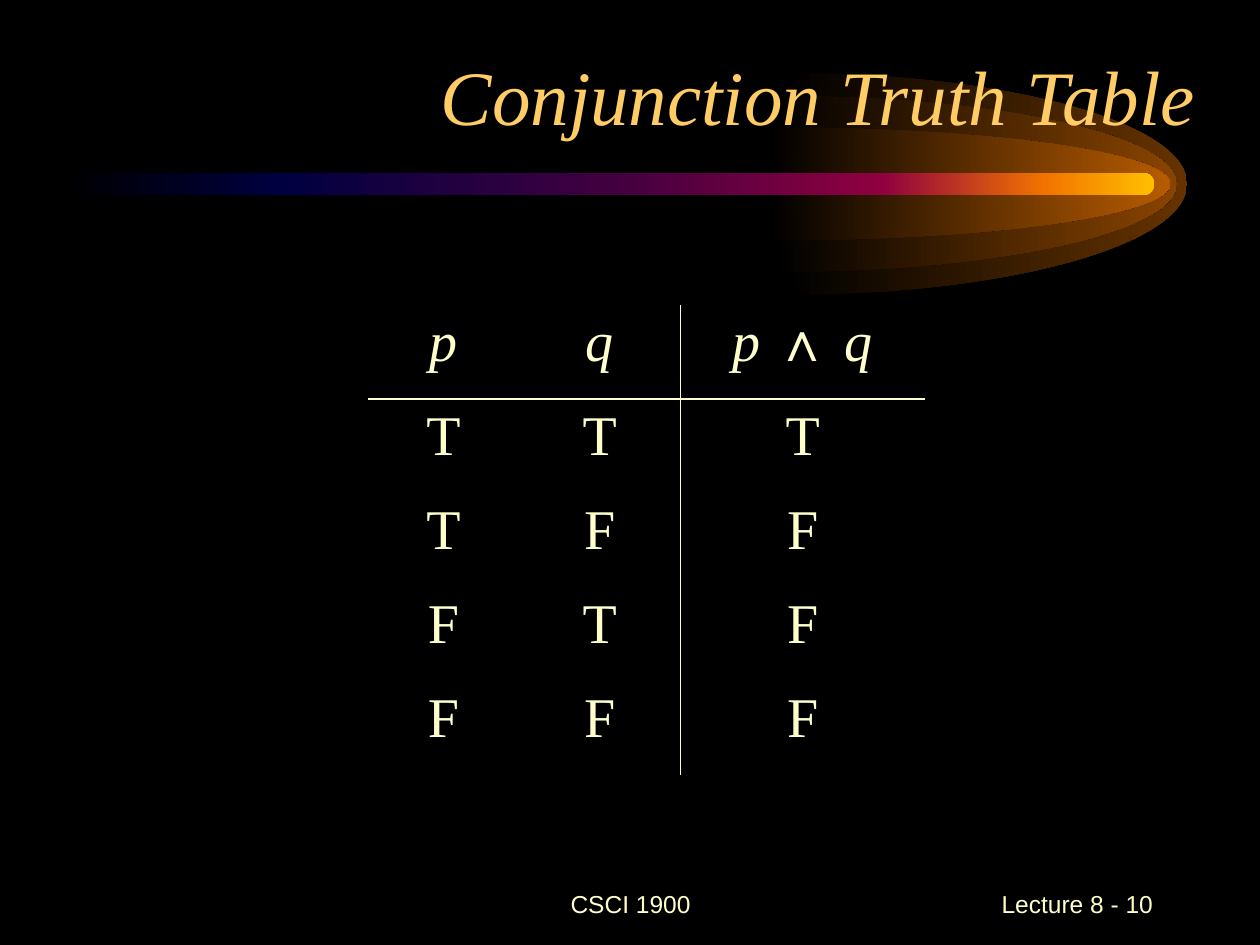
from dataclasses import dataclass

from lxml import etree
from pptx import Presentation
from pptx.dml.color import RGBColor
from pptx.enum.shapes import MSO_SHAPE
from pptx.enum.text import MSO_ANCHOR, PP_ALIGN
from pptx.oxml.ns import qn
from pptx.util import Inches, Pt

CENTER, RIGHT = PP_ALIGN.CENTER, PP_ALIGN.RIGHT
MIDDLE, BOTTOM = MSO_ANCHOR.MIDDLE, MSO_ANCHOR.BOTTOM
ROUND = MSO_SHAPE.ROUNDED_RECTANGLE

BLACK = RGBColor(0x00, 0x00, 0x00)
CREAM = RGBColor(0xFF, 0xFF, 0xCC)
GOLD = RGBColor(0xFF, 0xCC, 0x66)
TAIL = [
    (0, BLACK),
    (20, RGBColor(0x00, 0x00, 0x40)),
    (50, RGBColor(0x40, 0x00, 0x40)),
    (75, RGBColor(0x8F, 0x00, 0x40)),
    (90, RGBColor(0xF2, 0x73, 0x00)),
    (100, RGBColor(0xFF, 0xBF, 0x00)),
]
SERIF, SANS = "Times New Roman", "Arial"

MID_Y = 1.46
GLOW_W = 3.18
BEND = 0.55


@dataclass
class Glow:
    left: float
    half: float
    color: RGBColor


@dataclass
class Label:
    text: str
    box: tuple
    size: int
    font: str
    color: RGBColor
    align: PP_ALIGN
    anchor: MSO_ANCHOR
    italic: bool = False


GLOWS = [
    Glow(6.24, 0.88, RGBColor(0x66, 0x33, 0x00)),
    Glow(6.16, 0.7, RGBColor(0x89, 0x44, 0x00)),
    Glow(6.11, 0.45, RGBColor(0xB7, 0x5B, 0x00)),
]
LABELS = [
    Label("CSCI 1900", (3.42, 6.92, 3.17, 0.5), 14, SANS, CREAM, CENTER, MIDDLE),
    Label("Lecture 8 - 10", (7.17, 6.92, 2.08, 0.5), 14, SANS, CREAM, RIGHT, MIDDLE),
    Label("Conjunction Truth Table", (0.42, 0.25, 9.17, 0.92), 44, SERIF, GOLD,
          RIGHT, BOTTOM, True),
]
HEAD = ["p", "q", "p ∧ q"]
ROWS = [HEAD, list("TTT"), list("TFF"), list("FTF"), list("FFF")]
COLS = [1.2, 1.28, 1.94]
TABLE_H = 3.73


def paint(shape, stops: list) -> None:
    """Fill a shape from left to right with (percent, colour) stops."""
    shape.shadow.inherit = False
    shape.line.fill.background()
    shape.fill.gradient()
    shape.fill.gradient_angle = 0
    grad = shape._element.spPr.find(qn("a:gradFill")).find(qn("a:gsLst"))
    for old in list(grad):
        grad.remove(old)
    for pos, color in stops:
        stop = etree.SubElement(grad, qn("a:gs"), pos=str(pos * 1000))
        etree.SubElement(stop, qn("a:srgbClr"), val=str(color))


def add_glow(slide, glow: Glow) -> None:
    """Draw the right half of an ellipse, its two quarters as curves."""
    wide, half = Inches(GLOW_W), Inches(glow.half)
    pen = slide.shapes.build_freeform(0, 0)
    pen.add_line_segments([(wide, half), (0, 2 * half)], close=True)
    shape = pen.convert_to_shape(Inches(glow.left), Inches(MID_Y - glow.half))
    curves = [
        [(BEND * wide, 0), (wide, (1 - BEND) * half), (wide, half)],
        [(wide, (1 + BEND) * half), (BEND * wide, 2 * half), (0, 2 * half)],
    ]
    lines = list(shape._element.spPr.iter(qn("a:lnTo")))
    for line, points in zip(lines, curves):
        curve = etree.Element(qn("a:cubicBezTo"))
        for x, y in points:
            etree.SubElement(curve, qn("a:pt"), x=str(int(x)), y=str(int(y)))
        line.getparent().replace(line, curve)
    paint(shape, [(0, BLACK), (100, glow.color)])


def add_label(slide, label: Label) -> None:
    frame = slide.shapes.add_textbox(*map(Inches, label.box)).text_frame
    frame.word_wrap = True
    frame.vertical_anchor = label.anchor
    par = frame.paragraphs[0]
    par.text = label.text
    par.alignment = label.align
    par.font.size = Pt(label.size)
    par.font.name = label.font
    par.font.italic = label.italic
    par.font.color.rgb = label.color


def set_edges(cell, sides: str) -> None:
    """Rule the sides named in a string of L, R, T and B; clear the others."""
    props = cell._tc.get_or_add_tcPr()
    for i, side in enumerate("LRTB"):
        line = etree.Element(qn(f"a:ln{side}"), w=str(Pt(1)))
        if side in sides:
            fill = etree.SubElement(line, qn("a:solidFill"))
            etree.SubElement(fill, qn("a:srgbClr"), val=str(CREAM))
        else:
            etree.SubElement(line, qn("a:noFill"))
        props.insert(i, line)


def fill_cell(cell, text: str, head: bool) -> None:
    cell.fill.background()
    par = cell.text_frame.paragraphs[0]
    par.alignment = CENTER
    par.font.size = Pt(32)
    par.font.name = SERIF
    par.font.color.rgb = CREAM
    parts = ["p ", "∧ ", "q"] if "∧" in text else [text]
    for part in parts:
        run = par.add_run()
        run.text = part
        run.font.italic = head and "∧" not in part


def add_truth(slide) -> None:
    box = map(Inches, (2.92, 2.42, sum(COLS), TABLE_H))
    table = slide.shapes.add_table(len(ROWS), len(COLS), *box).table
    table.first_row = table.horz_banding = False
    for col, width in zip(table.columns, COLS):
        col.width = Inches(width)
    for r, row in enumerate(ROWS):
        for c, text in enumerate(row):
            cell = table.cell(r, c)
            fill_cell(cell, text, r == 0)
            set_edges(cell, ["", "R", "L"][c] + {0: "B", 1: "T"}.get(r, ""))


def main() -> None:
    deck = Presentation()
    deck.slide_width, deck.slide_height = Inches(10), Inches(7.5)
    slide = deck.slides.add_slide(deck.slide_layouts[6])
    back = slide.background.fill
    back.solid()
    back.fore_color.rgb = BLACK
    for glow in GLOWS:
        add_glow(slide, glow)
    bar = slide.shapes.add_shape(ROUND, *map(Inches, (0.5, 1.37, 8.66, 0.18)))
    bar.adjustments[0] = 0.5
    paint(bar, TAIL)
    for label in LABELS:
        add_label(slide, label)
    add_truth(slide)
    deck.save("out.pptx")


if __name__ == "__main__":
    main()
